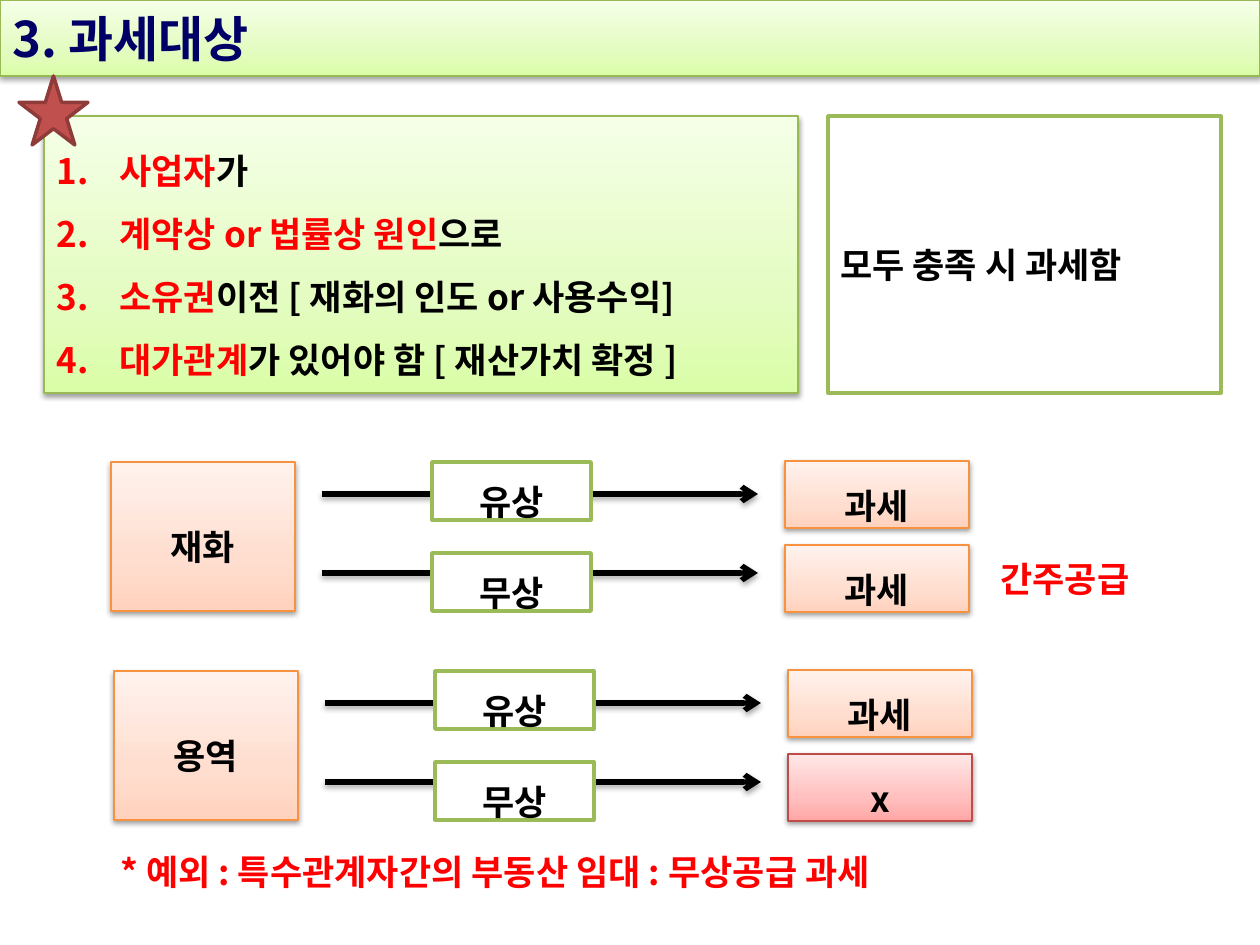
from lxml import etree
from pptx import Presentation
from pptx import util as u
from pptx.dml.color import RGBColor
from pptx.enum import shapes, text
from pptx.oxml import ns, parse_xml

SCALE = 914400 / 126
FONT = "Noto Sans CJK KR"
BLACK = RGBColor(0, 0, 0)
WHITE = RGBColor(255, 255, 255)
RED = RGBColor(255, 0, 0)
NAVY = RGBColor(0, 0, 0x66)
OLIVE = RGBColor(0x9B, 0xBB, 0x59)
BRICK = RGBColor(0xC0, 0x50, 0x4D)
BRICK_EDGE = RGBColor(0x8E, 0x3B, 0x39)


def theme(edge, *stops):
    return RGBColor.from_string(edge), [RGBColor.from_string(c) for c in stops]


GREEN = theme("98B955", "DAFDA7", "E4FCC2", "F5FFE7")
ORANGE = theme("F69240", "FFD2BD", "FFDED0", "FFF2ED")
PINK = theme("BF4C48", "FFA6A5", "FFC0BF", "FFE7E7")


def px(*values):
    return [u.Emu(round(v * SCALE)) for v in values]


def add_shadow(spPr, dist, alpha):
    fx = spPr.find(ns.qn("a:effectLst"))
    if fx is None:
        fx = etree.SubElement(spPr, ns.qn("a:effectLst"))
    fx.append(parse_xml(
        f'<a:outerShdw {ns.nsdecls("a")} blurRad="40000" dist="{dist}" dir="5400000" rotWithShape="0">'
        f'<a:srgbClr val="000000"><a:alpha val="{alpha}000"/></a:srgbClr></a:outerShdw>'))


def fill_gradient(sp, colors):
    sp.fill.gradient()
    grad = sp._element.spPr.find(ns.qn("a:gradFill"))
    stops = "".join(f'<a:gs pos="{pos}000"><a:srgbClr val="{c}"/></a:gs>'
                    for pos, c in zip((0, 35, 100), colors))
    new = parse_xml(f'<a:gradFill {ns.nsdecls("a")} rotWithShape="1"><a:gsLst>{stops}</a:gsLst>'
                    '<a:lin ang="16200000" scaled="0"/></a:gradFill>')
    grad.getparent().replace(grad, new)


def add_run(p, words, color=BLACK, size=20):
    r = p.add_run()
    r.text = words
    f = r.font
    f.name, f.size, f.bold = FONT, u.Pt(size), True
    f.color.rgb = color
    ea = etree.SubElement(r._r.get_or_add_rPr(), ns.qn("a:ea"))
    ea.set("typeface", FONT)


def add_box(s, box, fill, edge, width, kind=shapes.MSO_SHAPE.RECTANGLE):
    sp = s.shapes.add_shape(kind, *px(*box))
    sp.shadow.inherit = False
    if isinstance(fill, list):
        fill_gradient(sp, fill)
        add_shadow(sp._element.spPr, 20000, 38)
    else:
        sp.fill.solid()
        sp.fill.fore_color.rgb = fill
    sp.line.color.rgb = edge
    sp.line.width = u.Pt(width)
    sp.text_frame.word_wrap = True
    sp.text_frame.vertical_anchor = text.MSO_ANCHOR.MIDDLE
    return sp


def add_themed(s, box, colors):
    edge, stops = colors
    return add_box(s, box, stops, edge, 0.75)


def write(sp, words, align=text.PP_ALIGN.CENTER):
    p = sp.text_frame.paragraphs[0]
    p.alignment, p.line_spacing = align, 1.5
    add_run(p, words)


def add_title(s, box, words):
    sp = add_themed(s, box, GREEN)
    p = sp.text_frame.paragraphs[0]
    p.alignment = text.PP_ALIGN.LEFT
    add_run(p, words, NAVY, 28)


def add_conditions(s, box, items):
    tf = add_themed(s, box, GREEN).text_frame
    for i, (key, rest) in enumerate(items):
        p = tf.add_paragraph() if i else tf.paragraphs[0]
        p.alignment, p.line_spacing = text.PP_ALIGN.LEFT, 1.5
        pPr = p._p.get_or_add_pPr()
        pPr.set("marL", "457200")
        pPr.set("indent", "-457200")
        etree.SubElement(pPr, ns.qn("a:buAutoNum")).set("type", "arabicPeriod")
        add_run(p, key, RED)
        add_run(p, rest)


def add_result(s, box, words):
    write(add_box(s, box, WHITE, OLIVE, 2), words, text.PP_ALIGN.LEFT)


def add_arrow(s, x1, x2, y):
    c = s.shapes.add_connector(shapes.MSO_CONNECTOR.STRAIGHT, *px(x1, y, x2, y))
    c.line.color.rgb = BLACK
    c.line.width = u.Pt(3)
    etree.SubElement(c.line._get_or_add_ln(), ns.qn("a:tailEnd")).set("type", "arrow")
    add_shadow(c._element.spPr, 23000, 35)


def add_supply(s, box, name, branches):
    x, y, w, h = box
    write(add_themed(s, box, ORANGE), name)
    for i in range(len(branches)):
        add_arrow(s, x + 211, x + 647, y + 32 + 79 * i)
    for i, (payment, _, _) in enumerate(branches):
        write(add_box(s, (x + 321, y + 91 * i, 159, 58), WHITE, OLIVE, 2), payment)
    for i, (_, outcome, colors) in enumerate(branches):
        write(add_themed(s, (x + 674, y - 1 + 84 * i, w, 67), colors), outcome)


def add_note(s, box, words):
    tf = s.shapes.add_textbox(*px(*box)).text_frame
    tf.word_wrap = True
    tf.auto_size = text.MSO_AUTO_SIZE.SHAPE_TO_FIT_TEXT
    add_run(tf.paragraphs[0], words, RED)


def main():
    prs = Presentation()
    prs.slide_width, prs.slide_height = px(1260, 945)
    s = prs.slides.add_slide(prs.slide_layouts[6])
    add_title(s, (0, 0, 1260, 76), "3. 과세대상")
    add_conditions(s, (44, 116, 754, 277), [
        ("사업자", "가"),
        ("계약상 or 법률상 원인", "으로"),
        ("소유권", "이전 [ 재화의 인도 or 사용수익]"),
        ("대가관계", "가 있어야 함 [ 재산가치 확정 ]"),
    ])
    add_result(s, (828, 116, 393, 277), "모두 충족 시 과세함")
    add_supply(s, (111, 462, 184, 149), "재화",
               [("유상", "과세", ORANGE), ("무상", "과세", ORANGE)])
    add_supply(s, (114, 671, 184, 149), "용역",
               [("유상", "과세", ORANGE), ("무상", "x", PINK)])
    add_note(s, (108, 844, 1037, 55), "* 예외 : 특수관계자간의 부동산 임대 : 무상공급 과세")
    add_note(s, (988, 551, 238, 55), "간주공급")
    add_box(s, (19, 76, 69, 69), BRICK, BRICK_EDGE, 2, shapes.MSO_SHAPE.STAR_5_POINT)
    prs.save("out.pptx")


if __name__ == "__main__":
    main()
